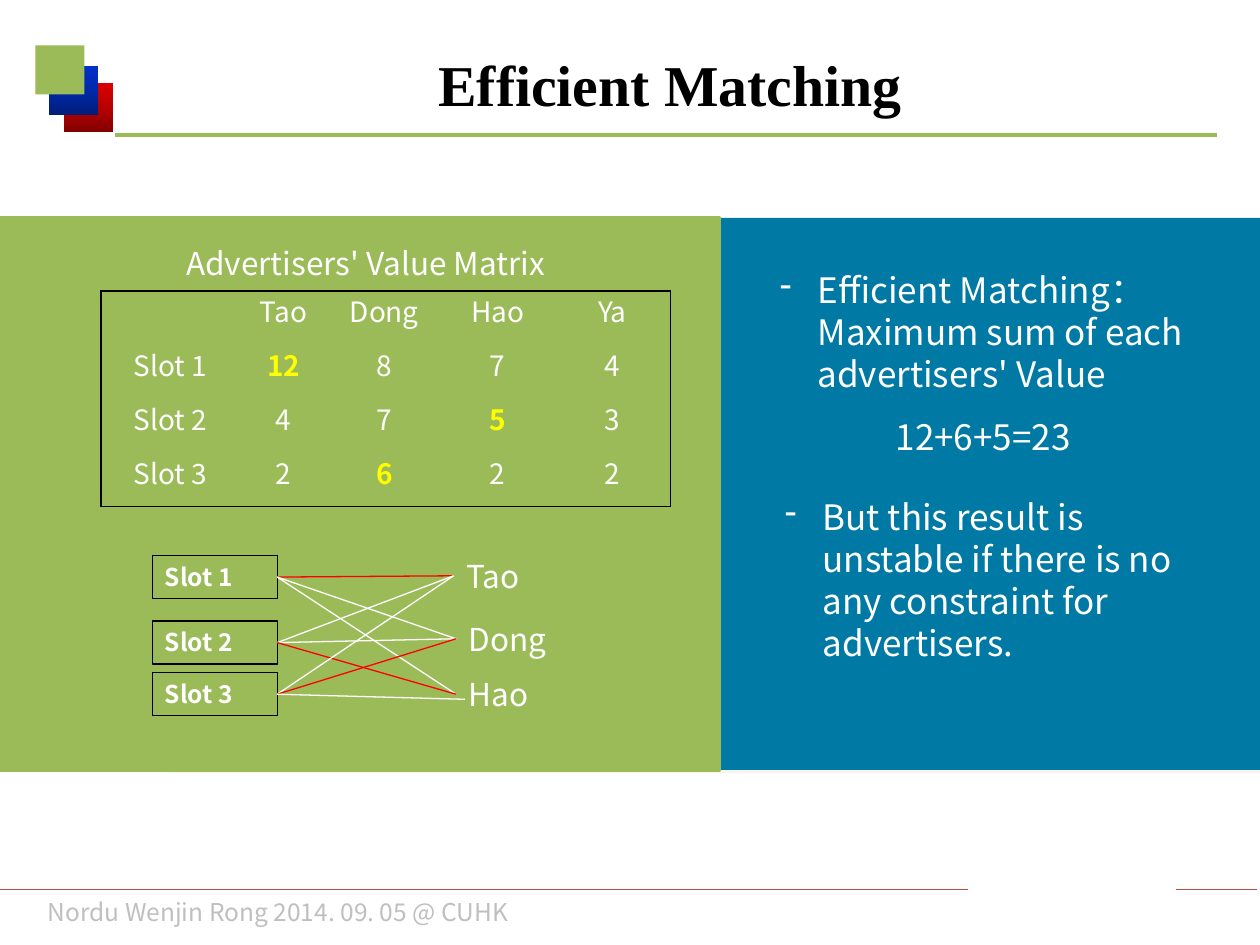
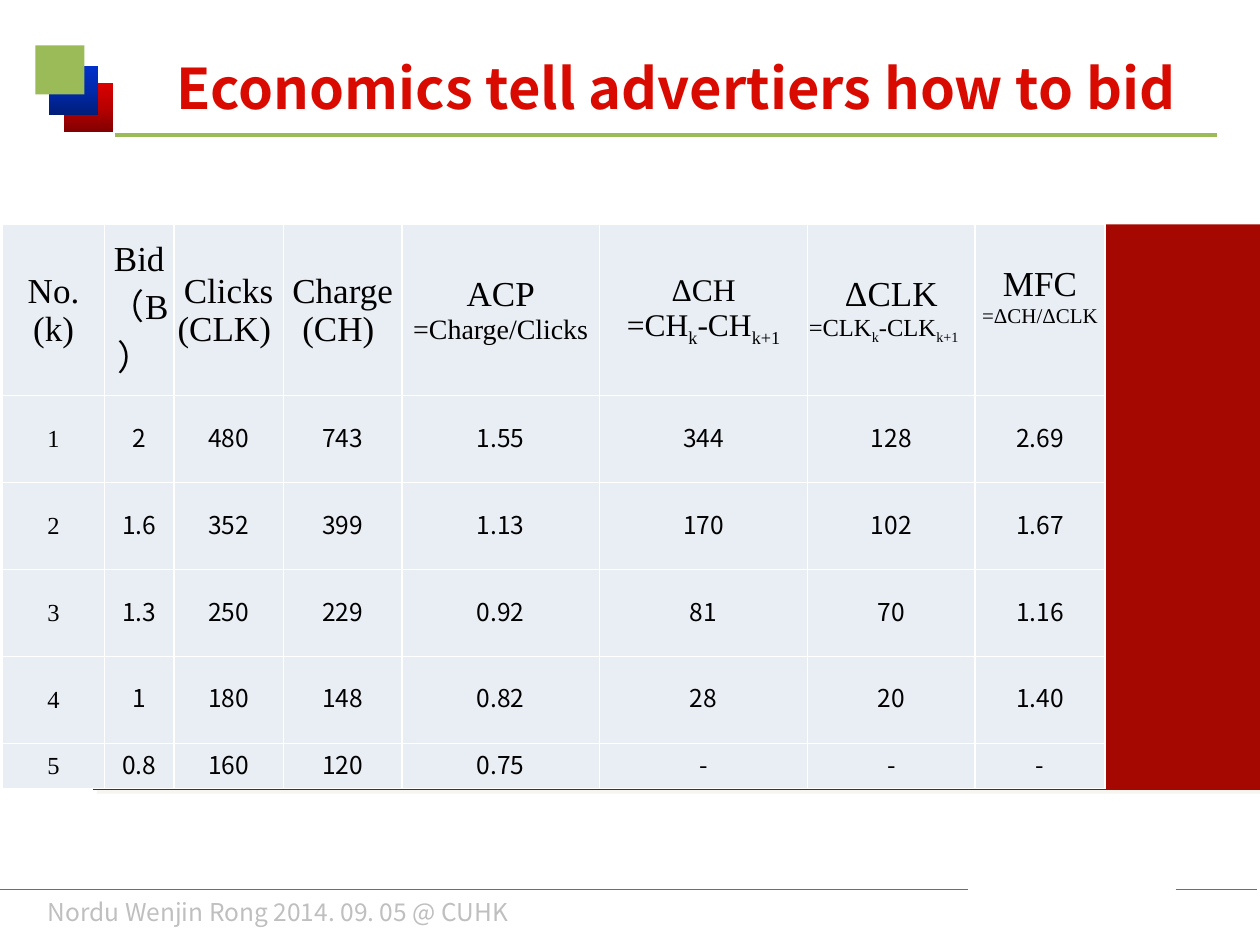
import copy
from dataclasses import dataclass

import pptx
import pptx.dml.color
import pptx.enum.dml
import pptx.enum.shapes
import pptx.enum.text
import pptx.oxml
import pptx.oxml.ns
import pptx.util

ALIGN = pptx.enum.text.PP_ALIGN
ANCHOR = pptx.enum.text.MSO_ANCHOR
qn = pptx.oxml.ns.qn
COLUMNS, ROWS = 100, 75
UNIT = pptx.util.Inches(0.1)


@dataclass(frozen=True)
class Theme:
    sans: str = "Noto Sans CJK SC"
    serif: str = "Times New Roman"
    green: str = "9BBB59"
    blue: str = "0079A5"
    dark_red: str = "A40800"
    title_red: str = "D90B00"
    red: str = "FF0000"
    yellow: str = "FFFF00"
    white: str = "FFFFFF"
    black: str = "000000"
    pale: str = "E9EDF4"
    footer: str = "BFBFBF"
    footer_rule: str = "BF4C48"
    shadow: str = "EEECE1"
    red_fade: tuple = ("810000", "B80000", "DA0000")
    blue_fade: tuple = ("001D78", "0129AB", "0131CB")
    small: float = 14
    cell: float = 16
    label: float = 18
    body: float = 20
    leading: float = 1.2
    hairline: float = 0.75
    border: float = 1


THEME = Theme()


@dataclass
class Box:
    """An area of the slide, measured in grid columns and rows."""
    col: float = 0
    row: float = 0
    cols: float = COLUMNS
    rows: float = ROWS

    def area(self, col, row, cols, rows):
        return Box(self.col + col, self.row + row, cols, rows)

    def emu(self):
        return [round(n * UNIT) for n in (self.col, self.row, self.cols, self.rows)]


@dataclass
class Line:
    """A paragraph made of (text, is_subscript) runs."""
    runs: list
    size: float = THEME.body
    align: int = ALIGN.CENTER


def rgb(value):
    return pptx.dml.color.RGBColor.from_string(value)


def write(frame, lines, size=THEME.body, color=THEME.white, font=THEME.sans,
          bold=False, align=ALIGN.LEFT, anchor=ANCHOR.TOP, bullet=None):
    frame.word_wrap = True
    frame.vertical_anchor = anchor
    if isinstance(lines, str):
        lines = [Line([(lines, False)], size, align)]
    for index, line in enumerate(lines):
        paragraph = frame.add_paragraph() if index else frame.paragraphs[0]
        if bullet:
            properties = paragraph._p.get_or_add_pPr()
            hang = pptx.util.Inches(0.3)
            properties.set("marL", str(hang))
            properties.set("indent", str(-hang))
            properties.append(pptx.oxml.parse_xml(
                f'<a:buChar {pptx.oxml.ns.nsdecls("a")} char="{bullet}"/>'))
        paragraph.alignment = line.align
        if font == THEME.sans:
            paragraph.line_spacing = pptx.util.Pt(line.size * THEME.leading)
        for text, subscript in line.runs:
            run = paragraph.add_run()
            run.text = text
            run.font.size = pptx.util.Pt(line.size)
            run.font.name = font
            run.font.bold = bold
            run.font.color.rgb = rgb(color)
            properties = run._r.get_or_add_rPr()
            properties.append(pptx.oxml.parse_xml(
                f'<a:ea {pptx.oxml.ns.nsdecls("a")} typeface="{THEME.sans}"/>'))
            if subscript:
                properties.set("baseline", "-25000")


def add_text(slide, box, text, **form):
    label = slide.shapes.add_textbox(*box.emu())
    write(label.text_frame, text, **form)
    return label


def add_rect(slide, box, fill=None, line=None, width=THEME.hairline):
    rect = slide.shapes.add_shape(pptx.enum.shapes.MSO_SHAPE.RECTANGLE, *box.emu())
    rect.shadow.inherit = False
    if isinstance(fill, tuple):
        fade(rect, fill)
    elif fill:
        rect.fill.solid()
        rect.fill.fore_color.rgb = rgb(fill)
    else:
        rect.fill.background()
    if line:
        rect.line.color.rgb = rgb(line)
        rect.line.width = pptx.util.Pt(width)
    else:
        rect.line.fill.background()
    return rect


def fade(rect, colors):
    """Fill with a three-step gradient that rises from the bottom."""
    rect.fill.gradient()
    rect.fill.gradient_angle = 90
    stops = rect._element.spPr.find(".//" + qn("a:gsLst"))
    stops.insert(1, copy.deepcopy(stops[0]))
    for index, (stop, color) in enumerate(zip(rect.fill.gradient_stops, colors)):
        stop.color.rgb = rgb(color)
        stop.position = index / 2


def add_panel(slide, box, fill):
    """A plain rectangle with a faint hard shadow."""
    panel = add_rect(slide, box, fill)
    panel._element.spPr.find(qn("a:effectLst")).append(pptx.oxml.parse_xml(
        f'<a:outerShdw {pptx.oxml.ns.nsdecls("a")} dist="38100" dir="2700000">'
        f'<a:srgbClr val="{THEME.shadow}"><a:alpha val="50000"/></a:srgbClr></a:outerShdw>'))


def add_line(slide, start, end, color, width=THEME.hairline):
    ends = [round(n * UNIT) for n in (*start, *end)]
    line = slide.shapes.add_connector(pptx.enum.shapes.MSO_CONNECTOR.STRAIGHT, *ends)
    line.line.color.rgb = rgb(color)
    line.line.width = pptx.util.Pt(width)
    line._element.spPr.append(pptx.oxml.parse_xml(
        f'<a:effectLst {pptx.oxml.ns.nsdecls("a")}/>'))
    return line


def set_borders(cell, **colors):
    """Draw the sides named L, R, T and B, and clear the others."""
    properties = cell._tc.get_or_add_tcPr()
    for index, side in enumerate("LRTB"):
        color = colors.get(side)
        paint = (f'<a:solidFill><a:srgbClr val="{color}"/></a:solidFill>'
                 if color else "<a:noFill/>")
        width = pptx.util.Pt(THEME.border)
        properties.insert(index, pptx.oxml.parse_xml(
            f'<a:ln{side} {pptx.oxml.ns.nsdecls("a")} w="{width}">{paint}</a:ln{side}>'))


def add_grid(slide, box, columns, rows):
    table = slide.shapes.add_table(len(rows), len(columns), *box.emu()).table
    table.first_row = table.horz_banding = False
    for column, width in zip(table.columns, columns):
        column.width = round(width * UNIT)
    for row, height in zip(table.rows, rows):
        row.height = round(height * UNIT)
    return table


def add_frame(slide, box, title_box, title, **title_form):
    """Footer, corner squares, title and its rule."""
    for left, right in ((0, 76.8), (93.3, 99.8)):
        add_line(slide, (box.col + left, box.row + 70.6),
                 (box.col + right, box.row + 70.6), THEME.footer_rule)
    add_rect(slide, box.area(5.1, 6.6, 3.9, 3.9), THEME.red_fade)
    add_rect(slide, box.area(3.9, 5.2, 3.9, 3.9), THEME.blue_fade)
    add_line(slide, (box.col + 9.1, box.row + 10.7), (box.col + 96.6, box.row + 10.7),
             THEME.green, 2.25)
    add_rect(slide, box.area(2.8, 3.6, 3.9, 3.9), THEME.green)
    add_text(slide, box.area(2.8, 70.7, 48, 3.4), "Nordu Wenjin Rong 2014. 09. 05 @ CUHK",
             size=THEME.small, color=THEME.footer)
    add_text(slide, title_box, title, bold=True, align=ALIGN.CENTER,
             anchor=ANCHOR.MIDDLE, **title_form)


def add_value_matrix(slide, box):
    add_text(slide, box.area(5.8, -4.2, 33, 4), "Advertisers' Value Matrix", size=THEME.label)
    values = [["", "Tao", "Dong", "Hao", "Ya"],
              ["Slot 1", "12", "8", "7", "4"],
              ["Slot 2", "4", "7", "5", "3"],
              ["Slot 3", "2", "6", "2", "2"]]
    matched = {(1, 1), (2, 3), (3, 2)}
    last_row, last_column = len(values) - 1, len(values[0]) - 1
    table = add_grid(slide, box, [11, 7, 9, 9, 9.2], [box.rows / 4] * 4)
    for r, row in enumerate(values):
        for c, value in enumerate(row):
            cell = table.cell(r, c)
            cell.fill.background()
            edges = {"L": c == 0, "R": c == last_column, "T": r == 0, "B": r == last_row}
            set_borders(cell, **{side: THEME.black for side, drawn in edges.items() if drawn})
            if value:
                best = (r, c) in matched
                write(cell.text_frame, value, size=THEME.cell, align=ALIGN.CENTER,
                      color=THEME.yellow if best else THEME.white, bold=best)


def add_matching(slide, box):
    """Slots on the left, advertisers on the right, the best pairs in red."""
    slots, advertisers = [], []
    for number, top in enumerate((0.4, 5.6, 9.7), start=1):
        slot = add_rect(slide, box.area(0, top, 9.9, 3.4), line=THEME.black)
        write(slot.text_frame, f"Slot {number}", size=THEME.small, bold=True)
        slots.append(slot)
    for name, left, top, width in (("Tao", 23.9, 0, 12.5), ("Dong", 24.1, 5, 18.5),
                                   ("Hao", 24.1, 9.4, 15.4)):
        advertisers.append(add_text(slide, box.area(left, top, width, 4), name,
                                    size=THEME.label))
    best = {(0, 0), (1, 2), (2, 1)}
    for s, slot in enumerate(slots):
        for a, advertiser in enumerate(advertisers):
            link = add_line(slide, (box.col, box.row), (box.col + 24.8, box.row + 11.8),
                            THEME.red if (s, a) in best else THEME.white)
            link.begin_connect(slot, 3)
            if (s, a) != (2, 2):
                link.end_connect(advertiser, 1)


def add_conclusions(slide, box):
    add_text(slide, box.area(3.8, 3.5, 35.2, 11.1),
             "Efficient Matching：Maximum sum of each advertisers' Value", bullet="-")
    add_text(slide, box.area(13, 15.2, 18, 4.4), "12+6+5=23")
    add_text(slide, box.area(4.2, 21.5, 36.8, 14.5),
             "But this result is unstable if there is no any constraint for advertisers.",
             bullet="-")


def matching_slide(slide, box):
    add_frame(slide, box, box.area(8.2, 1.7, 90, 9.8), "Efficient Matching",
              size=33, font=THEME.serif, color=THEME.black)
    add_panel(slide, box.area(13, 17.3, 87, 43.8), THEME.blue)
    add_rect(slide, box.area(0, 17.3, 57.1, 43.8), THEME.green, THEME.green, 2)
    add_value_matrix(slide, box.area(8, 23.1, 45.2, 17.1))
    add_matching(slide, box.area(12.1, 43.7, 45, 14))
    add_conclusions(slide, box.area(57.1, 17.3, 42.9, 43.8))


def plain(text, size=THEME.body):
    return Line([(text, False)], size)


def difference(name, size, align=ALIGN.CENTER):
    return Line([("=" + name, False), ("k", True), ("-" + name, False), ("k+1", True)],
                size, align)


def add_cost_table(slide, box):
    headings = [[plain("No."), plain("(k)")],
                [plain("Bid"), plain("（B） ")],
                [plain("Clicks"), plain("(CLK) ")],
                [plain("Charge"), plain("(CH) ")],
                [plain("ACP"), plain("=Charge/Clicks", 16)],
                [plain("ΔCH", 18), difference("CH", 18)],
                [plain("ΔCLK"), difference("CLK", 14, ALIGN.LEFT)],
                [plain("MFC"), plain("=ΔCH/ΔCLK", 12)]]
    values = [["1", "2", "480", "743", "1.55", "344", "128", "2.69"],
              ["2", "1.6", "352", "399", "1.13", "170", "102", "1.67"],
              ["3", "1.3", "250", "229", "0.92", "81", "70", "1.16"],
              ["4", "1", "180", "148", "0.82", "28", "20", "1.40"],
              ["5", "0.8", "160", "120", "0.75", "-", "-", "-"]]
    table = add_grid(slide, box, [8.1, 5.5, 8.7, 9.4, 15.7, 16.5, 13.3, 10.3],
                     [13.6] + [6.9] * 4 + [3.6])
    for r, row in enumerate([headings] + values):
        for c, content in enumerate(row):
            cell = table.cell(r, c)
            cell.fill.solid()
            cell.fill.fore_color.rgb = rgb(THEME.pale)
            set_borders(cell, **dict.fromkeys("LRTB", THEME.white))
            cell.margin_left = cell.margin_right = cell.margin_top = pptx.util.Inches(0.01)
            cell.margin_bottom = 0
            write(cell.text_frame, content, size=THEME.small, color=THEME.black,
                  font=THEME.serif if r == 0 or c == 0 else THEME.sans, align=ALIGN.CENTER)
            cell.vertical_anchor = ANCHOR.MIDDLE
    table.cell(0, len(headings) - 1).margin_bottom = pptx.util.Inches(0.22)


def bidding_slide(slide, box):
    add_frame(slide, box, box.area(8.7, 3, 90, 7.9), "Economics tell advertiers how to bid",
              size=32, color=THEME.title_red)
    add_panel(slide, box.area(7.4, 17.8, 92.6, 44.9), THEME.dark_red)
    add_cost_table(slide, box.area(0.2, 17.8, 87.6, 44.9))


def main():
    deck = pptx.Presentation()
    deck.slide_width, deck.slide_height = COLUMNS * UNIT, ROWS * UNIT
    for build in (matching_slide, bidding_slide):
        build(deck.slides.add_slide(deck.slide_layouts[6]), Box())
    deck.save("out.pptx")


if __name__ == "__main__":
    main()
